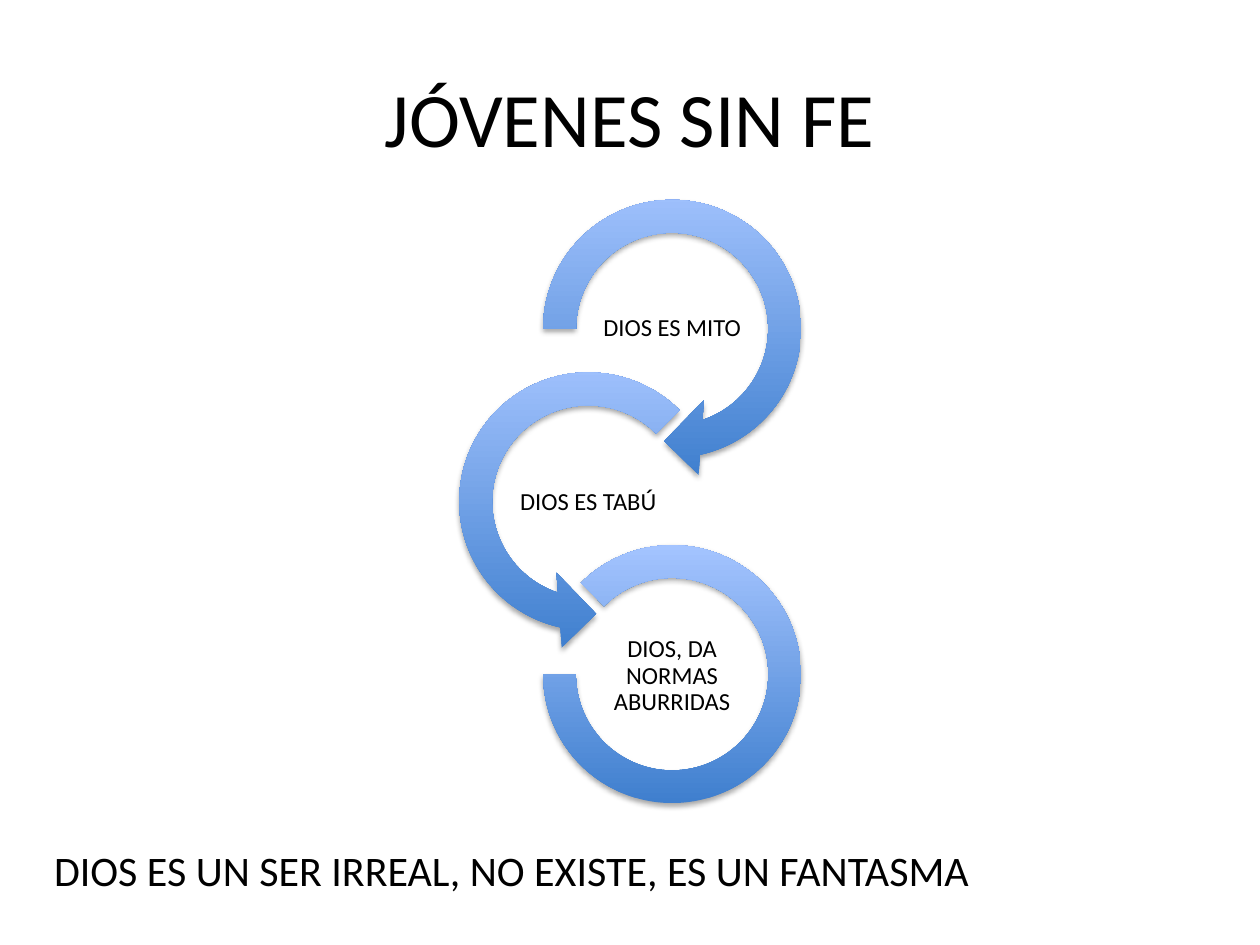
from lxml import etree
from pptx import Presentation
from pptx.dml.color import RGBColor
from pptx.enum import shapes, text
from pptx.oxml import ns
from pptx.util import Cm, Pt

TITLE = "JÓVENES SIN FE"
CONCLUSION = "DIOS ES UN SER IRREAL, NO EXISTE, ES UN FANTASMA"
KIND = shapes.MSO_SHAPE
BELIEFS = [
    ("DIOS ES MITO", KIND.CIRCULAR_ARROW, 13.55, 6.05, (0.11, 11.42, 45, 108, 0.125)),
    ("DIOS ES TABÚ", KIND.LEFT_CIRCULAR_ARROW, 11.86, 6.05, (0.11, 11.42, 63, 189, 0.125)),
    ("DIOS, DA NORMAS ABURRIDAS", KIND.BLOCK_ARC, 13.55, 5.2, (135, 108, 0.127)),
]
FIRST_RING_Y, RING_STEP = 6.63, 3.48
FIRST_LABEL_Y, LABEL_STEP = 6.63, 3.5
LABEL_WIDTH, LABEL_HEIGHT = 3.35, 1.68
RING_COLORS = ("3F7FCE", "A4C4FF")
SHADOW = {"blurRad": Pt(3.1), "dist": Pt(1.8), "dir": 90 * 60000, "rotWithShape": 0}
INSETS = ("margin_left", "margin_top", "margin_right", "margin_bottom")
CENTERED = {"alignment": text.PP_ALIGN.CENTER}
MIDDLE = {"vertical_anchor": text.MSO_ANCHOR.MIDDLE}
LABEL_FRAME = {**MIDDLE, **dict.fromkeys(INSETS, Cm(0.03))}
LABEL_PARAGRAPH = {**CENTERED, "line_spacing": 0.9, "space_after": Pt(4.9)}


def color(value):
    return RGBColor.from_string(value)


def apply(target, values):
    for name, value in values.items():
        setattr(target, name, value)


def write(slide, words, box, size, frame_format, paragraph_format):
    frame = slide.shapes.add_textbox(*map(Cm, box)).text_frame
    apply(frame, {"word_wrap": True, **frame_format})
    paragraph = frame.paragraphs[0]
    paragraph.text = words
    apply(paragraph, paragraph_format)
    font = paragraph.runs[0].font
    apply(font, {"name": "Calibri", "size": Pt(size)})
    font.color.rgb = color("000000")


def cast_shadow(shape):
    shape.shadow.inherit = False
    effects = shape._element.spPr.find(ns.qn("a:effectLst"))
    outer = etree.SubElement(effects, ns.qn("a:outerShdw"))
    for name, value in SHADOW.items():
        outer.set(name, str(int(value)))
    black = etree.SubElement(outer, ns.qn("a:srgbClr"), val="000000")
    etree.SubElement(black, ns.qn("a:alpha"), val="35000")


def draw_ring(slide, kind, x, y, size, adjustments):
    ring = slide.shapes.add_shape(
        kind, Cm(x - size / 2), Cm(y - size / 2), Cm(size), Cm(size))
    for index, value in enumerate(adjustments):
        ring.adjustments[index] = value
    ring.fill.gradient()
    ring.fill.gradient_angle = 90
    for stop, shade in zip(ring.fill.gradient_stops, RING_COLORS):
        stop.color.rgb = color(shade)
    ring.line.fill.background()
    cast_shadow(ring)


def main():
    deck = Presentation()
    apply(deck, {"slide_width": Cm(25.4), "slide_height": Cm(19.05)})
    slide = deck.slides.add_slide(deck.slide_layouts[6])
    write(slide, TITLE, (1.27, 0.76, 22.86, 3.18), 44, MIDDLE, CENTERED)
    for row, (belief, kind, x, size, adjustments) in enumerate(BELIEFS):
        draw_ring(slide, kind, x, FIRST_RING_Y + row * RING_STEP, size, adjustments)
        label_y = FIRST_LABEL_Y + row * LABEL_STEP
        label_box = (x - LABEL_WIDTH / 2, label_y - LABEL_HEIGHT / 2,
                     LABEL_WIDTH, LABEL_HEIGHT)
        write(slide, belief, label_box, 14, LABEL_FRAME, LABEL_PARAGRAPH)
    write(slide, CONCLUSION, (0.84, 16.89, 24.1, 1.27), 24,
          {"auto_size": text.MSO_AUTO_SIZE.SHAPE_TO_FIT_TEXT}, {})
    deck.save("out.pptx")


if __name__ == "__main__":
    main()
